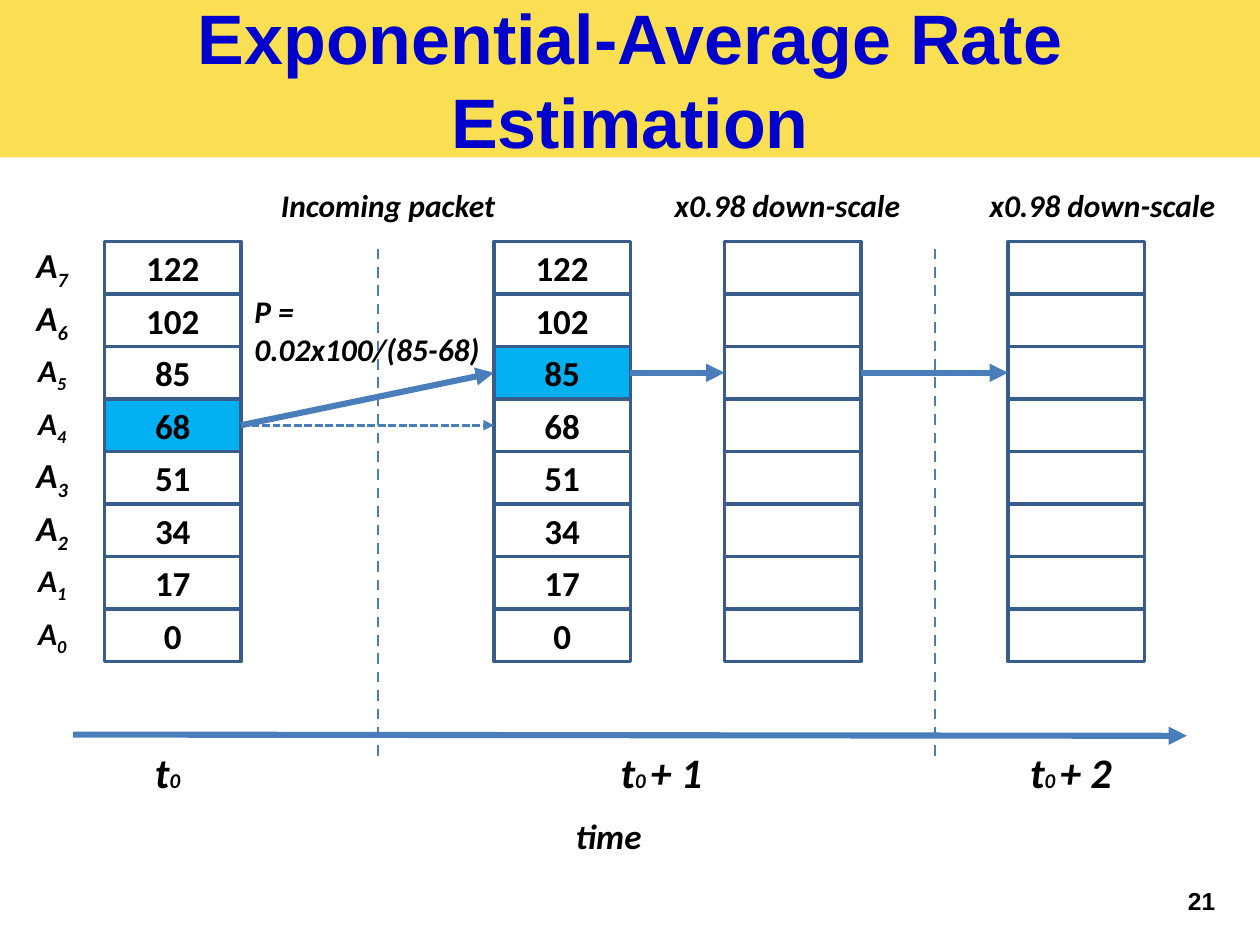
from dataclasses import dataclass

from lxml import etree
from pptx import Presentation
from pptx import util as u
from pptx.dml.color import RGBColor
from pptx.enum import dml, shapes, text
from pptx.oxml import ns


@dataclass(frozen=True)
class Theme:
    """Colours, fonts and type sizes of the slide."""
    banner: str = "FBDF53"
    title: str = "0000CC"
    ink: str = "000000"
    cell: str = "FFFFFF"
    active: str = "00B0F0"
    border: str = "385D8A"
    arrow: str = "4A7EBB"
    body_font: str = "Calibri"
    title_font: str = "Arial"
    title_size: int = 40
    time_size: int = 24
    large: int = 20
    small: int = 18
    number_size: int = 14
    sub_size: int = 12
    heavy: float = 3.5
    thin: float = 1.5
    outline: float = 2


class Board:
    """Draws styled elements on the current slide."""

    def __init__(self, slide, theme):
        """Keep the slide and its theme."""
        self.s, self.t = slide, theme

    def style(self, r, size, italic=False, font=None, color=None):
        """Format one bold run."""
        f = r.font
        f.name, f.size = font or self.t.body_font, u.Pt(size)
        f.bold, f.italic = True, italic
        f.color.rgb = RGBColor.from_string(color or self.t.ink)

    def box(self, x, y, w, h, label="", size=None, fill=None, border=True, **font):
        """Add a rectangle with centred text."""
        sp = self.s.shapes.add_shape(shapes.MSO_SHAPE.RECTANGLE, *map(u.Inches, (x, y, w, h)))
        sp.shadow.inherit = False
        if fill:
            sp.fill.solid()
            sp.fill.fore_color.rgb = RGBColor.from_string(fill)
        else:
            sp.fill.background()
        if border:
            sp.line.color.rgb = RGBColor.from_string(self.t.border)
            sp.line.width = u.Pt(self.t.outline)
        else:
            sp.line.fill.background()
        if label:
            tf = sp.text_frame
            tf.text = label
            tf.vertical_anchor = text.MSO_ANCHOR.MIDDLE
            p = tf.paragraphs[0]
            p.alignment = text.PP_ALIGN.CENTER
            self.style(p.runs[0], size or self.t.large, **font)
        return sp

    def label(self, x, y, w, h, content, size, align=text.PP_ALIGN.CENTER,
              anchor=text.MSO_ANCHOR.MIDDLE, italic=True, font=None):
        """Add a text box and return its frame."""
        tf = self.s.shapes.add_textbox(*map(u.Inches, (x, y, w, h))).text_frame
        tf.word_wrap = True
        tf.vertical_anchor = anchor
        tf.text = content
        for p in tf.paragraphs:
            p.alignment = align
            for r in p.runs:
                self.style(r, size, italic, font)
        return tf

    def add_run(self, tf, content, size, baseline=None):
        """Append an italic run, lowered if a baseline is given."""
        r = tf.paragraphs[0].add_run()
        r.text = content
        self.style(r, size, italic=True)
        if baseline:
            r._r.get_or_add_rPr().set("baseline", str(baseline))

    def column(self, x, values, active=None, fill=None):
        """Stack one cell per value and return the cells."""
        return [self.box(x, TOP + i * ROW, CELL_W, ROW, v,
                         fill=self.t.active if i == active else fill)
                for i, v in enumerate(values)]

    def line(self, start, end, width, dash=None, arrow=True):
        """Add a straight connector."""
        c = self.s.shapes.add_connector(shapes.MSO_CONNECTOR.STRAIGHT,
                                        *map(u.Inches, (*start, *end)))
        c.line.color.rgb = RGBColor.from_string(self.t.arrow)
        c.line.width = u.Pt(width)
        if dash:
            c.line.dash_style = dash
        if arrow:
            etree.SubElement(c.line._get_or_add_ln(), ns.qn("a:tailEnd"), type="triangle")
        etree.SubElement(c._element.spPr, ns.qn("a:effectLst"))
        return c

    def link(self, source, target, width, dash=None):
        """Join the right side of one cell to the left side of another."""
        c = self.line((0, 0), (0, 0), width, dash)
        c.begin_connect(source, 3)
        c.end_connect(target, 1)


TOP, ROW, CELL_W = 23 / 12, 5 / 12, 13 / 12
LEFTS = (0.83, 3.92, 5.75, 8)
RATES = ("122", "102", "85", "68", "51", "34", "17", "0")
DASH = dml.MSO_LINE


def main():
    """Build the slide and save it."""
    prs = Presentation()
    prs.slide_width, prs.slide_height = u.Inches(10), u.Inches(7.5)
    t = Theme()
    b = Board(prs.slides.add_slide(prs.slide_layouts[6]), t)

    b.box(0, 0, 10, 1.25, "Exponential-Average Rate Estimation", t.title_size,
          t.banner, border=False, font=t.title_font, color=t.title)

    for i in range(len(RATES)):
        n = len(RATES) - 1 - i
        size = t.small if n % 4 < 2 else t.large
        tf = b.label(0.08, TOP + i * ROW, 0.67, ROW, "A", size)
        b.add_run(tf, str(n), size, baseline=-25000)

    for x, caption in ((2.08, "Incoming packet"), (5.25, "x0.98 down-scale"),
                       (7.75, "x0.98 down-scale")):
        b.label(x, 1.42, 2, ROW, caption, t.small)
    b.label(1.92, 2.33, 2.25, 0.58, "P =\n0.02x100/(85-68)", t.small, text.PP_ALIGN.LEFT)

    before = b.column(LEFTS[0], RATES, active=3)
    after = b.column(LEFTS[1], RATES, active=2)
    scaled, rescaled = (b.column(x, [""] * len(RATES), fill=t.cell) for x in LEFTS[2:])

    b.link(before[3], after[2], t.heavy)
    b.link(before[3], after[3], t.thin, DASH.SQUARE_DOT)
    b.link(after[2], scaled[2], t.heavy)
    b.link(scaled[2], rescaled[2], t.heavy)

    b.line((0.58, 5.83), (9.42, 5.84), t.heavy)
    for x in (3, 7.42):
        b.line((x, 6), (x, TOP), t.thin, DASH.DASH, arrow=False)
    for x, sub, step in ((0.83, "0", ""), (4.75, "0 ", "+ 1"), (8, "0 ", "+ 2")):
        tf = b.label(x, 5.92, 1, ROW, "t", t.time_size)
        b.add_run(tf, sub, t.sub_size)
        if step:
            b.add_run(tf, step, t.time_size)
    b.label(4.33, 6.42, 1, ROW, "time", t.large)

    b.label(9.33, 6.98, 0.67, 0.52, "21", t.number_size, text.PP_ALIGN.LEFT,
            text.MSO_ANCHOR.TOP, italic=False, font=t.title_font)
    prs.save("out.pptx")


if __name__ == "__main__":
    main()
